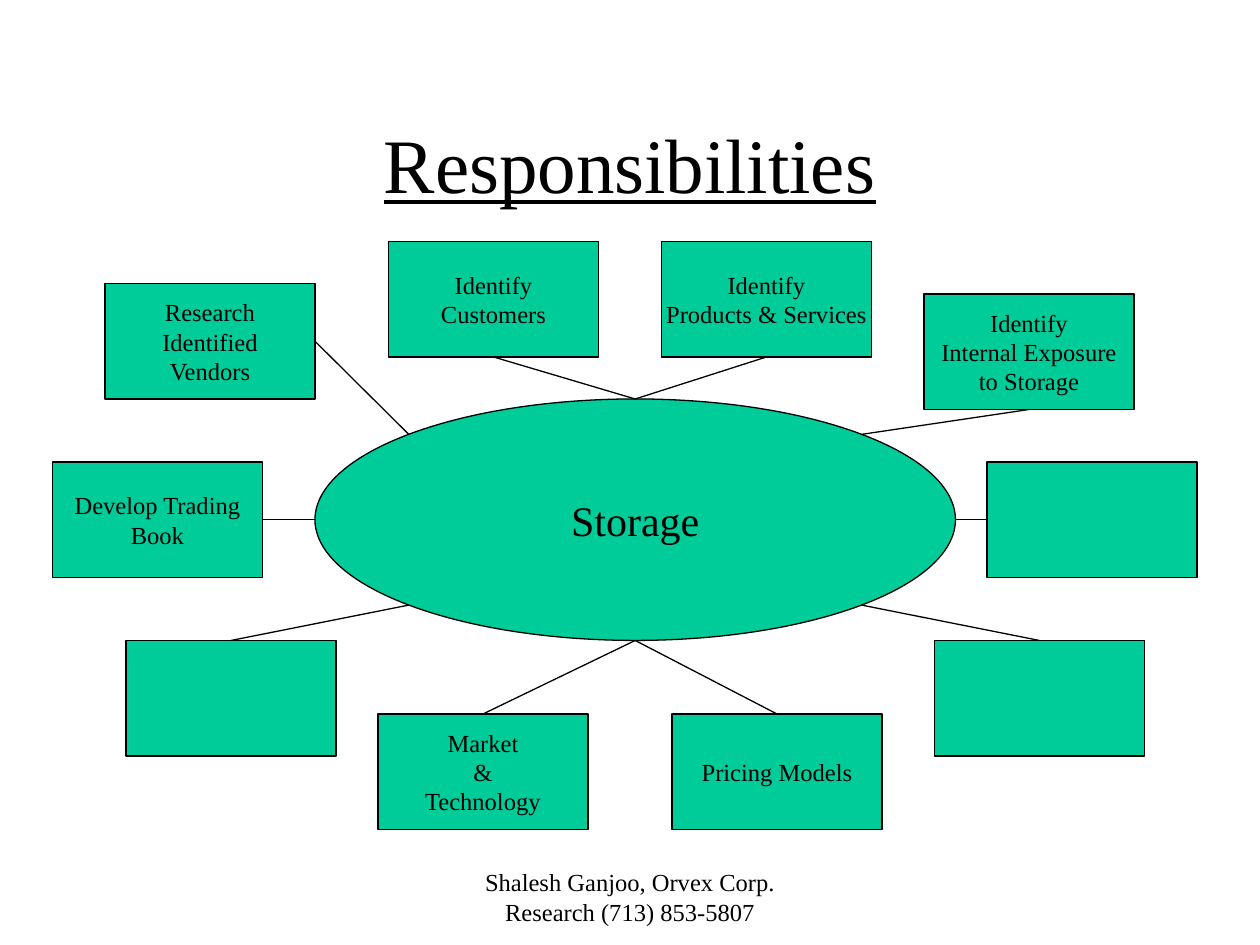
from math import cos, radians, sin

from lxml.etree import SubElement
from pptx import Presentation
from pptx.dml.color import RGBColor
from pptx.enum.shapes import MSO_CONNECTOR as Connector, MSO_SHAPE as Shape
from pptx.enum.text import MSO_ANCHOR as Anchor, PP_ALIGN as Align
from pptx.oxml.ns import qn
from pptx.util import Inches, Pt

COLORS = {"fill": "00CC99", "ink": "000000"}
FONT = "Times New Roman"
COLUMNS, ROWS = 120, 90
BOX_SIZE = (20, 11)
HUB = (30, 38, 61, 23)
TOP, LEFT, BOTTOM, RIGHT = range(4)

DUTIES = [
    (63, 23, ["Identify", "Products & Services"], BOTTOM, 270),
    (5, 44, ["Develop Trading", "Book"], RIGHT, 180),
    (12, 61, [], TOP, 135),
    (36, 68, ["Market", "&", "Technology"], TOP, 90),
    (88, 28, ["Identify", "Internal Exposure", "to Storage"], BOTTOM, 315),
    (94, 44, [], LEFT, 0),
    (89, 61, [], TOP, 45),
    (64, 68, ["Pricing Models"], TOP, 90),
    (10, 27, ["Research", "Identified", "Vendors"], RIGHT, 225),
    (37, 23, ["Identify", "Customers"], BOTTOM, 270),
]


class Board:
    """Draws styled elements on one slide, placed by grid columns and rows."""

    def __init__(self, deck):
        self.page = deck.slides.add_slide(deck.slide_layouts[6])
        self.column = deck.slide_width / COLUMNS
        self.row = deck.slide_height / ROWS

    def place(self, column, row):
        return round(column * self.column), round(row * self.row)

    def letter(self, box, lines, size, anchor=Anchor.MIDDLE, wrap=False, underline=None):
        frame = box.text_frame
        frame.word_wrap = wrap
        frame.vertical_anchor = anchor
        frame.text = "\n".join(lines)
        for para in frame.paragraphs:
            para.alignment = Align.CENTER
            para.font.name = FONT
            para.font.size = Pt(size)
            para.font.underline = underline
            para.font.color.rgb = RGBColor.from_string(COLORS["ink"])

    def label(self, column, row, width, height, text, size, **style):
        box = self.page.shapes.add_textbox(*self.place(column, row), *self.place(width, height))
        self.letter(box, [text], size, wrap=True, **style)

    def node(self, kind, column, row, width, height, lines, size):
        box = self.page.shapes.add_shape(kind, *self.place(column, row), *self.place(width, height))
        box.shadow.inherit = False
        box.fill.solid()
        box.fill.fore_color.rgb = RGBColor.from_string(COLORS["fill"])
        self.outline(box)
        if lines:
            self.letter(box, lines, size)
        return box

    def outline(self, item):
        item.line.color.rgb = RGBColor.from_string(COLORS["ink"])
        item.line.width = Pt(0.75)

    def spoke(self, box, side, angle):
        column, row, width, height = HUB
        end = self.place(
            column + width / 2 * (1 + cos(radians(angle))),
            row + height / 2 * (1 + sin(radians(angle))),
        )
        line = self.page.shapes.add_connector(Connector.STRAIGHT, box.left, box.top, *end)
        line.begin_connect(box, side)
        self.outline(line)
        SubElement(line._element.spPr, qn("a:effectLst"))


def main():
    deck = Presentation()
    deck.slide_width, deck.slide_height = Inches(10), Inches(7.5)
    board = Board(deck)
    board.label(9, 8, 102, 15, "Responsibilities", 44, underline=True)
    board.node(Shape.OVAL, *HUB, ["Storage"], 24)
    for column, row, lines, side, angle in DUTIES:
        box = board.node(Shape.RECTANGLE, column, row, *BOX_SIZE, lines, 14)
        board.spoke(box, side, angle)
    credit = "Shalesh Ganjoo, Orvex Corp. Research (713) 853-5807"
    board.label(41, 82, 38, 6, credit, 14, anchor=Anchor.TOP)
    deck.save("out.pptx")


if __name__ == "__main__":
    main()
